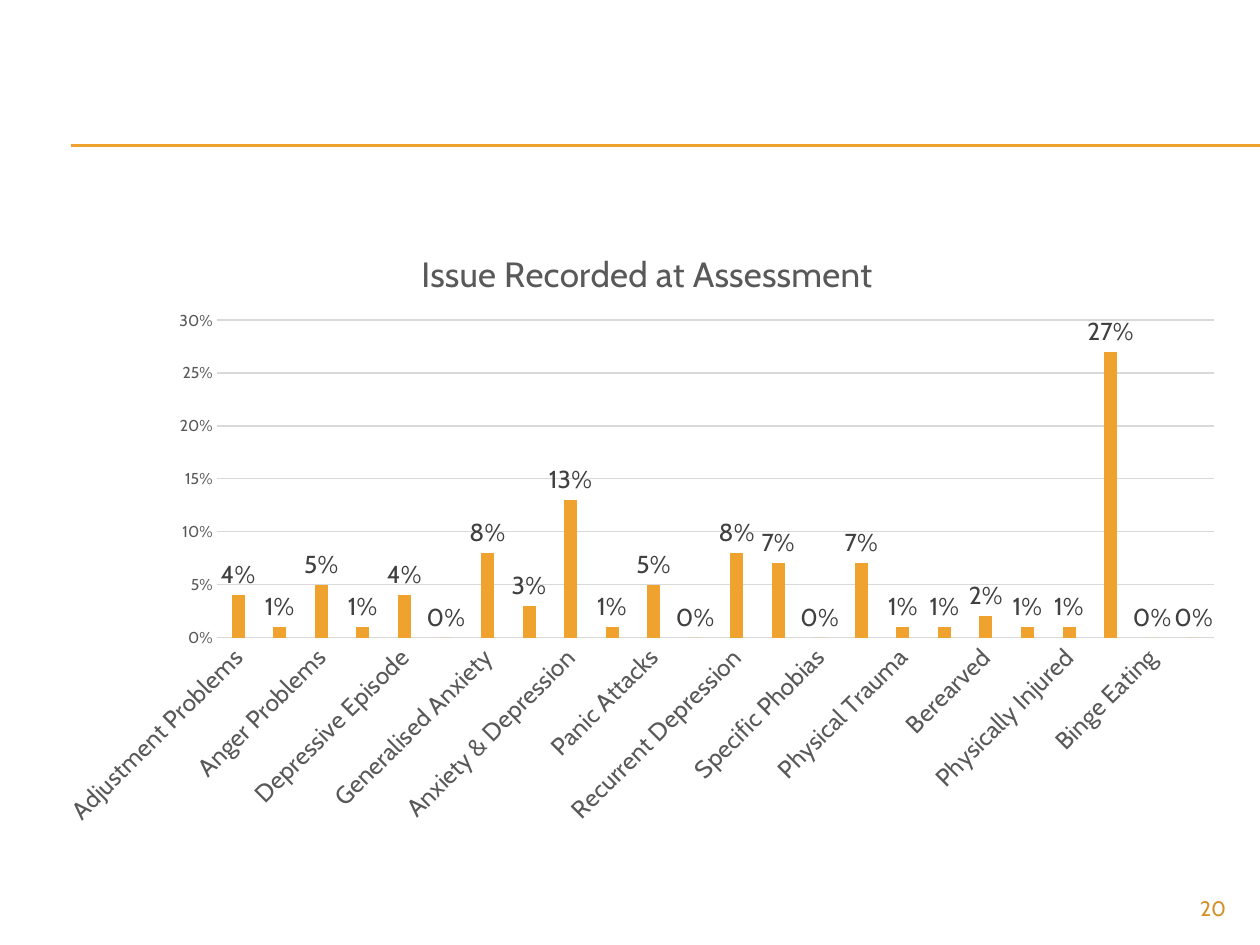
from lxml.etree import SubElement
from pptx import Presentation
from pptx.chart.data import CategoryChartData
from pptx.dml.color import RGBColor
from pptx.enum.chart import XL_CHART_TYPE as ChartType, XL_LABEL_POSITION as LabelPosition
from pptx.enum.chart import XL_TICK_MARK as TickMark
from pptx.enum.shapes import MSO_CONNECTOR as Connector
from pptx.enum.text import PP_ALIGN as Align
from pptx.oxml import parse_xml
from pptx.oxml.ns import nsdecls, qn
from pptx.util import Inches, Pt

TITLE = "Issue Recorded at Assessment"
PAGE_NUMBER = "20"
ISSUES = [
    ("Adjustment Problems", 0.04), ("Agorapobia", 0.01),
    ("Anger Problems", 0.05), ("Body Dysmorphia", 0.01),
    ("Depressive Episode", 0.04), ("Emotionally Unstable Personality", 0),
    ("Generalised Anxiety", 0.08), ("Health Anxiety", 0.03),
    ("Anxiety & Depression", 0.13), ("OCD", 0.01),
    ("Panic Attacks", 0.05), ("ASD", 0),
    ("Recurrent Depression", 0.08), ("Social Anxiety", 0.07),
    ("Specific Phobias", 0), ("Emotional Trauma", 0.07),
    ("Physical Trauma", 0.01), ("Sexual Trauma", 0.01),
    ("Berearved", 0.02), ("Carer", 0.01),
    ("Physically Injured", 0.01), ("Psychologcially Injured", 0.27),
    ("Binge Eating", 0), ("Bulimia", 0),
]
RULE_HEIGHTS = (1.15, 1.16)
CHART_BOX = (0.33, 1.7, 9.5, 4.95)
PLOT_BOX = (1.73, 2.54, 7.91, 2.52)
TITLE_CORNER = (3.29, 1.93)

THEME = {
    "font": "Cabin",
    "accent": "F0A22E", "number": "D48F29", "text": "595959",
    "label": "404040", "grid": "D9D9D9", "base": "000000",
    "title_size": 20, "label_size": 14, "number_size": 12,
    "base_size": 10, "scale_size": 9, "line": 0.75,
}


def color(name):
    return RGBColor.from_string(THEME[name])


def style_font(font, size, color_name):
    values = {"name": THEME["font"], "size": Pt(THEME[size]), "bold": False}
    for key, value in values.items():
        setattr(font, key, value)
    font.color.rgb = color(color_name)


def style_line(line, color_name):
    line.color.rgb = color(color_name)
    line.width = Pt(THEME["line"])


def place_in_chart(parent, index, box, inner=False):
    for old_layout in parent.findall(qn("c:layout")):
        parent.remove(old_layout)
    left, top, width, height = CHART_BOX
    fractions = [(box[0] - left) / width, (box[1] - top) / height]
    fractions += [length / whole for length, whole in zip(box[2:], (width, height))]
    layout = parse_xml(f"<c:layout {nsdecls('c')}/>")
    manual = SubElement(layout, qn("c:manualLayout"))
    if inner:
        SubElement(manual, qn("c:layoutTarget")).set("val", "inner")
    for mode in ("xMode", "yMode"):
        SubElement(manual, qn(f"c:{mode}")).set("val", "edge")
    for name, fraction in zip("xywh", fractions):
        SubElement(manual, qn(f"c:{name}")).set("val", f"{fraction:.3f}")
    parent.insert(index, layout)


def add_rules(slide):
    for height in RULE_HEIGHTS:
        rule = slide.shapes.add_connector(
            Connector.STRAIGHT, Inches(0.56), Inches(height), Inches(10), Inches(height))
        style_line(rule.line, "accent")
        SubElement(rule._element.spPr, qn("a:effectLst"))


def add_page_number(slide):
    box = slide.shapes.add_textbox(Inches(9), Inches(7.08), Inches(0.83), Inches(0.27))
    frame = box.text_frame
    frame.word_wrap = True
    for side in ("top", "bottom"):
        setattr(frame, f"margin_{side}", Inches(0.03))
    paragraph = frame.paragraphs[0]
    paragraph.alignment = Align.RIGHT
    run = paragraph.add_run()
    run.text = PAGE_NUMBER
    style_font(run.font, "number_size", "number")


def style_axes(chart):
    categories, scale = chart.category_axis, chart.value_axis
    for axis, size in ((categories, "label_size"), (scale, "scale_size")):
        axis.major_tick_mark = axis.minor_tick_mark = TickMark.NONE
        style_font(axis.tick_labels.font, size, "text")
    style_line(categories.format.line, "grid")
    categories._element.txPr.find(qn("a:bodyPr")).set("rot", "-2700000")
    for key, value in {"minimum_scale": 0, "maximum_scale": 0.3, "major_unit": 0.05}.items():
        setattr(scale, key, value)
    scale.format.line.fill.background()
    style_line(scale.major_gridlines.format.line, "grid")
    scale.tick_labels.number_format = "0%"
    scale.tick_labels.number_format_is_linked = False


def style_columns(plot):
    for key, value in {"gap_width": 219, "overlap": -27, "vary_by_categories": False,
                       "has_data_labels": True}.items():
        setattr(plot, key, value)
    fill = plot.series[0].format.fill
    fill.solid()
    fill.fore_color.rgb = color("accent")
    labels = plot.data_labels
    for key, value in {"show_value": True, "position": LabelPosition.OUTSIDE_END,
                       "number_format": "0%", "number_format_is_linked": False}.items():
        setattr(labels, key, value)
    style_font(labels.font, "label_size", "label")


def add_issue_chart(slide):
    data = CategoryChartData(number_format="0%")
    names, shares = zip(*ISSUES)
    data.categories = names
    data.add_series("Series 1", shares)
    chart = slide.shapes.add_chart(
        ChartType.COLUMN_CLUSTERED, *map(Inches, CHART_BOX), data).chart
    style_font(chart.font, "base_size", "base")
    chart.has_legend = False
    chart.has_title = True
    paragraph = chart.chart_title.text_frame.paragraphs[0]
    run = paragraph.add_run()
    run.text = TITLE
    style_font(run.font, "title_size", "text")
    style_axes(chart)
    style_columns(chart.plots[0])
    place_in_chart(chart.chart_title._element, 1, TITLE_CORNER)
    place_in_chart(chart._chartSpace.chart.plotArea, 0, PLOT_BOX, inner=True)


def main():
    presentation = Presentation()
    presentation.slide_width, presentation.slide_height = Inches(10), Inches(7.5)
    slide = presentation.slides.add_slide(presentation.slide_layouts[6])
    add_rules(slide)
    add_page_number(slide)
    add_issue_chart(slide)
    presentation.save("out.pptx")


if __name__ == "__main__":
    main()
